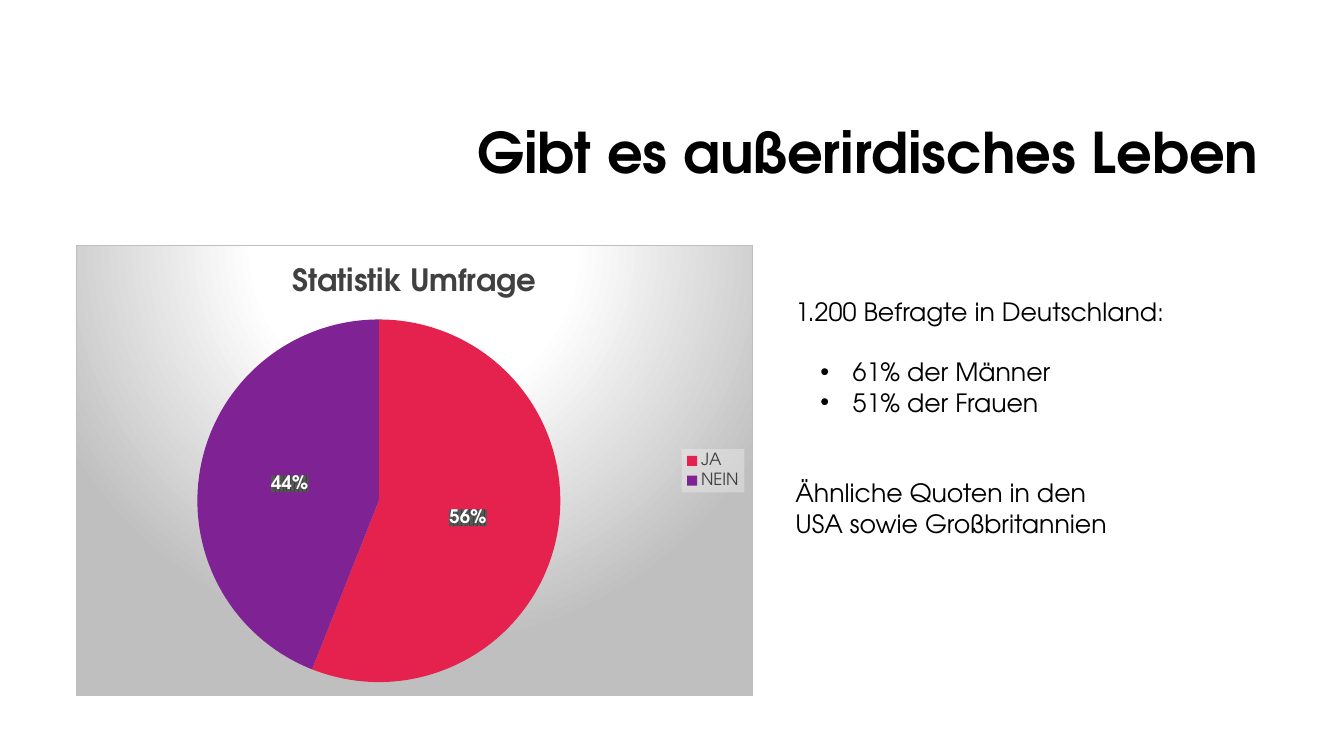
from lxml.etree import SubElement
from pptx import Presentation
from pptx.chart.data import CategoryChartData
from pptx.dml.color import RGBColor
from pptx.enum.chart import XL_CHART_TYPE, XL_LABEL_POSITION, XL_LEGEND_POSITION
from pptx.enum.text import MSO_ANCHOR, PP_ALIGN
from pptx.oxml import parse_xml
from pptx.oxml.ns import nsdecls, qn
from pptx.util import Pt

COLORS = {
    "ink": "000000", "gray": "404040", "mid": "595959", "edge": "BFBFBF",
    "pale": "F2F2F2", "white": "FFFFFF", "red": "E5224E", "plum": "7F2294",
}


def solid(name, alpha=100):
    return (f'<a:solidFill><a:srgbClr val="{COLORS[name]}">'
            f'<a:alpha val="{alpha * 1000}"/></a:srgbClr></a:solidFill>')


def glow():
    stops = "".join(
        f'<a:gs pos="{pos * 1000}"><a:srgbClr val="{COLORS[name]}"/></a:gs>'
        for pos, name in ((0, "white"), (39, "white"), (100, "edge")))
    return (f'<a:gradFill><a:gsLst>{stops}</a:gsLst><a:path path="circle">'
            '<a:fillToRect l="50000" t="-80000" r="50000" b="180000"/>'
            '</a:path></a:gradFill>')


def hatch():
    return (f'<a:pattFill prst="pct75"><a:fgClr><a:srgbClr val="{COLORS["gray"]}"/></a:fgClr>'
            f'<a:bgClr><a:srgbClr val="{COLORS["mid"]}"/></a:bgClr></a:pattFill>')


class Deck:
    face = "TeX Gyre Adventor"

    def __init__(self, slide):
        self.slide = slide

    def style(self, font, size, color="ink", bold=False):
        font.name = self.face
        font.size = Pt(size)
        font.bold = bold
        font.color.rgb = RGBColor.from_string(COLORS[color])

    def paint(self, node, fill, line="<a:ln><a:noFill/></a:ln>"):
        node.find(qn("c:txPr")).addprevious(
            parse_xml(f'<c:spPr {nsdecls("c", "a")}>{fill}{line}</c:spPr>'))

    def text(self, box, rows, size, bold=False, align=PP_ALIGN.LEFT, anchor=MSO_ANCHOR.TOP, lead=1.0):
        frame = self.slide.shapes.add_textbox(*map(Pt, box)).text_frame
        frame.word_wrap = True
        frame.vertical_anchor = anchor
        for i, (words, gap, dot) in enumerate(rows):
            para = frame.add_paragraph() if i else frame.paragraphs[0]
            para.text = words
            para.alignment = align
            para.line_spacing = lead
            if gap:
                para.space_before = Pt(gap)
            if dot:
                props = para._p.get_or_add_pPr()
                props.set("marL", str(Pt(41)))
                props.set("indent", str(Pt(-23)))
                SubElement(props, qn("a:buFont")).set("typeface", "Arial")
                SubElement(props, qn("a:buChar")).set("char", "•")
            self.style(para.font, size, bold=bold)

    def pie(self, box, title, parts):
        data = CategoryChartData()
        data.categories = [name for name, _, _ in parts]
        data.add_series(title, [value for _, value, _ in parts])
        chart = self.slide.shapes.add_chart(XL_CHART_TYPE.PIE, *map(Pt, box), data).chart
        self.style(chart.font, 10)
        edge = f'<a:ln w="{Pt(0.75)}">{solid("edge")}</a:ln>'
        self.paint(chart._chartSpace, glow(), edge)

        chart.has_title = True
        head = chart.chart_title.text_frame
        head.text = title
        self.style(head.paragraphs[0].font, 22, "gray", True)
        chart.chart_title.include_in_layout = False

        chart.has_legend = True
        chart.legend.position = XL_LEGEND_POSITION.RIGHT
        chart.legend.include_in_layout = False
        self.style(chart.legend.font, 12, "gray")
        self.paint(chart.legend._element, solid("pale", 39))

        plot = chart.plots[0]
        plot.vary_by_categories = True
        series = plot.series[0]
        for i, (_, _, color) in enumerate(parts):
            fill = series.points[i].format.fill
            fill.solid()
            fill.fore_color.rgb = RGBColor.from_string(COLORS[color])
        labels = series.data_labels
        labels.show_value = False
        labels.show_percentage = True
        labels.number_format = "0%"
        labels.number_format_is_linked = False
        labels.position = XL_LABEL_POSITION.CENTER
        self.style(labels.font, 13.3, "white", True)
        self.paint(labels._element, hatch())


def main():
    show = Presentation()
    show.slide_width, show.slide_height = Pt(960), Pt(540)
    deck = Deck(show.slides.add_slide(show.slide_layouts[6]))
    deck.text((228, 60.5, 678, 101.5), [("Gibt es außerirdisches Leben", 0, False)], 40,
              bold=True, align=PP_ALIGN.RIGHT, anchor=MSO_ANCHOR.MIDDLE, lead=0.9)
    deck.pie((54, 175, 484, 322.5), "Statistik Umfrage",
             [("JA", 56, "red"), ("NEIN", 44, "plum")])
    line = 21.6
    deck.text((561, 208, 381.5, 204), [
        ("1.200 Befragte in Deutschland:", 0, False),
        ("61% der Männer", line, True),
        ("51% der Frauen", 0, True),
        ("Ähnliche Quoten in den", 2 * line, False),
        ("USA sowie Großbritannien", 0, False),
    ], 18)
    show.save("out.pptx")


if __name__ == "__main__":
    main()
